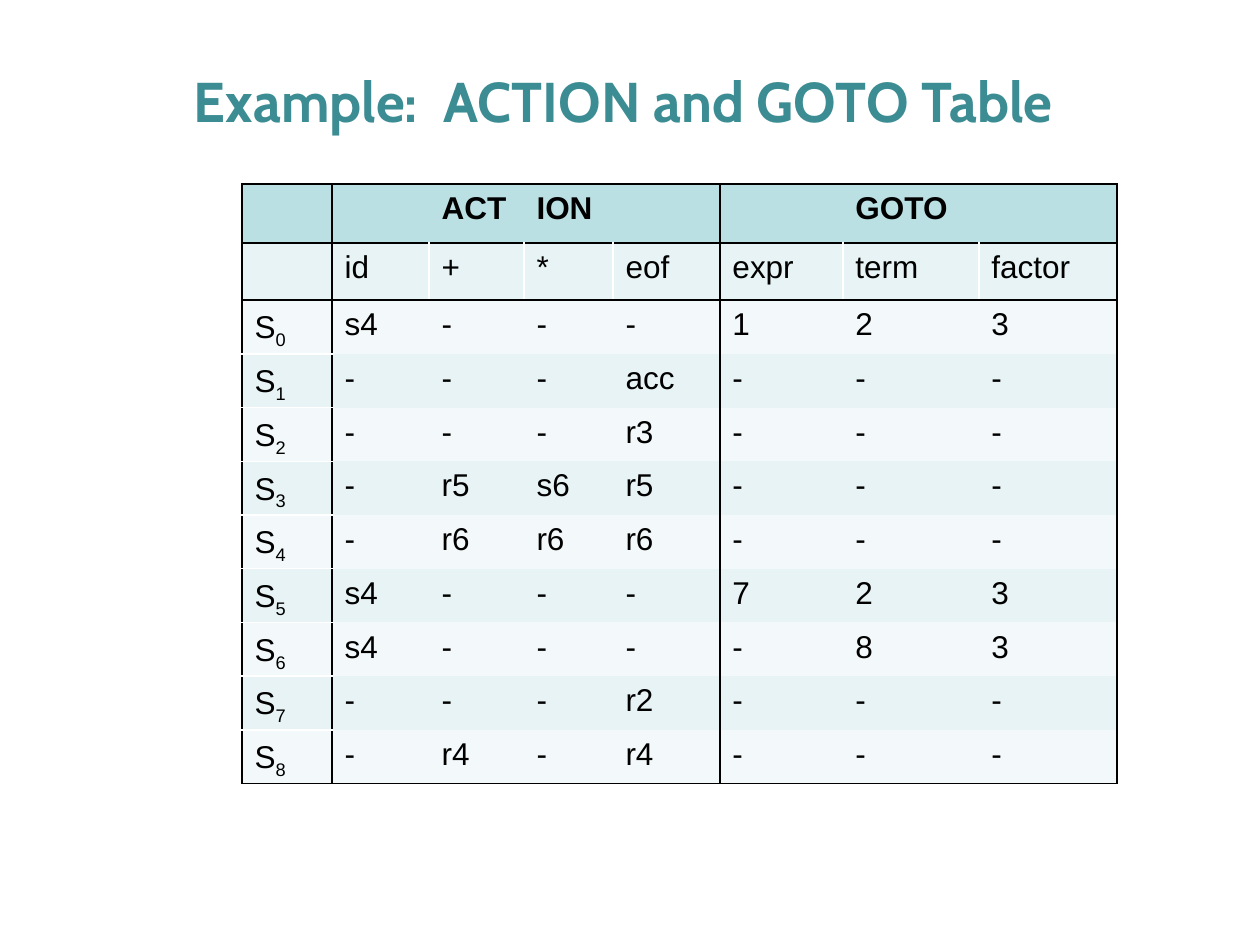
from lxml import etree
from pptx import Presentation
from pptx import util as u
from pptx.dml.color import RGBColor
from pptx.enum import text
from pptx.oxml.ns import qn

# Content
TITLE = "Example:  ACTION and GOTO Table"
HEADINGS = ["", "", "ACT", "ION", "", "", "GOTO", ""]
SYMBOLS = ["", "id", "+", "*", "eof", "expr", "term", "factor"]
STATES = [  # state n is S with subscript n
    "s4 - - - 1 2 3",
    "- - - acc - - -",
    "- - - r3 - - -",
    "- r5 s6 r5 - - -",
    "- r6 r6 r6 - - -",
    "s4 - - - 7 2 3",
    "s4 - - - - 8 3",
    "- - - r2 - - -",
    "- r4 - r4 - - -",
]
ROWS = [HEADINGS, SYMBOLS] + [[f"S{n}"] + line.split() for n, line in enumerate(STATES)]

# Layout in px
PX = u.Inches(1) // 126
COL_W = [90, 97, 95, 89, 107, 123, 136, 138]
ROW_H = [59, 51] + [53] * len(STATES)
LEFT, TOP = 242, 184

TEAL = RGBColor(0x3C, 0x8C, 0x93)
HEAD = RGBColor(0xBB, 0xE0, 0xE3)
BAND = RGBColor(0xE7, 0xF3, 0xF4)
PALE = RGBColor(0xF3, 0xF9, 0xFA)
BLACK = RGBColor(0, 0, 0)
WHITE = RGBColor(255, 255, 255)

# Grid lines: black rules enclose the groups
BLACK_X = {0, 1, 5, len(COL_W)}
BLACK_Y = {0, 1, 2, len(ROWS)}


def px(n):
    return u.Emu(n * PX)


def add_run(p, words, font, size, color, bold=False):
    r = p.add_run()
    r.text = words
    f = r.font
    f.name, f.size, f.bold = font, u.Pt(size), bold
    f.color.rgb = color
    return r


def vertical(x, row):
    return BLACK if x in BLACK_X else WHITE if row == 1 else None


def horizontal(y, col):
    return BLACK if y in BLACK_Y else WHITE if col == 0 else None


def set_border(cell, side, color):
    ln = etree.SubElement(cell._tc.get_or_add_tcPr(), qn(f"a:ln{side}"), w=str(u.Pt(1)))
    if color is None:
        etree.SubElement(ln, qn("a:noFill"))
    else:
        fill = etree.SubElement(ln, qn("a:solidFill"))
        etree.SubElement(fill, qn("a:srgbClr"), val=str(color))


def fill_cell(cell, i, j, words):
    for side, color in (("L", vertical(j, i)), ("R", vertical(j + 1, i)),
                        ("T", horizontal(i, j)), ("B", horizontal(i + 1, j))):
        set_border(cell, side, color)
    cell.fill.solid()
    cell.fill.fore_color.rgb = HEAD if i == 0 else BAND if i % 2 else PALE
    cell.margin_top = px(13)
    p = cell.text_frame.paragraphs[0]
    p.line_spacing = 0.8
    if not words:
        return
    is_state = i > 1 and j == 0
    add_run(p, words[0] if is_state else words, "Arial", 18, BLACK, i == 0)
    if is_state:
        r = add_run(p, words[1:], "Arial", 18, BLACK)
        r._r.get_or_add_rPr().set("baseline", "-25000")


prs = Presentation()
prs.slide_width, prs.slide_height = u.Inches(10), u.Inches(7.5)
s = prs.slides.add_slide(prs.slide_layouts[6])

# Title
sp = s.shapes.add_textbox(px(158), px(42), px(1102), px(116))
tf = sp.text_frame
tf.word_wrap = True
tf.vertical_anchor = text.MSO_ANCHOR.MIDDLE
tf.margin_left = px(36)
add_run(tf.paragraphs[0], TITLE, "Cabin", 32, TEAL, True)

# Parse table
tbl = s.shapes.add_table(len(ROWS), len(COL_W), px(LEFT), px(TOP),
                         px(sum(COL_W)), px(sum(ROW_H))).table
tbl.first_row = tbl.horz_banding = False
for j, w in enumerate(COL_W):
    tbl.columns[j].width = px(w)
for i, row in enumerate(ROWS):
    tbl.rows[i].height = px(ROW_H[i])
    for j, words in enumerate(row):
        fill_cell(tbl.cell(i, j), i, j, words)

prs.save("out.pptx")
